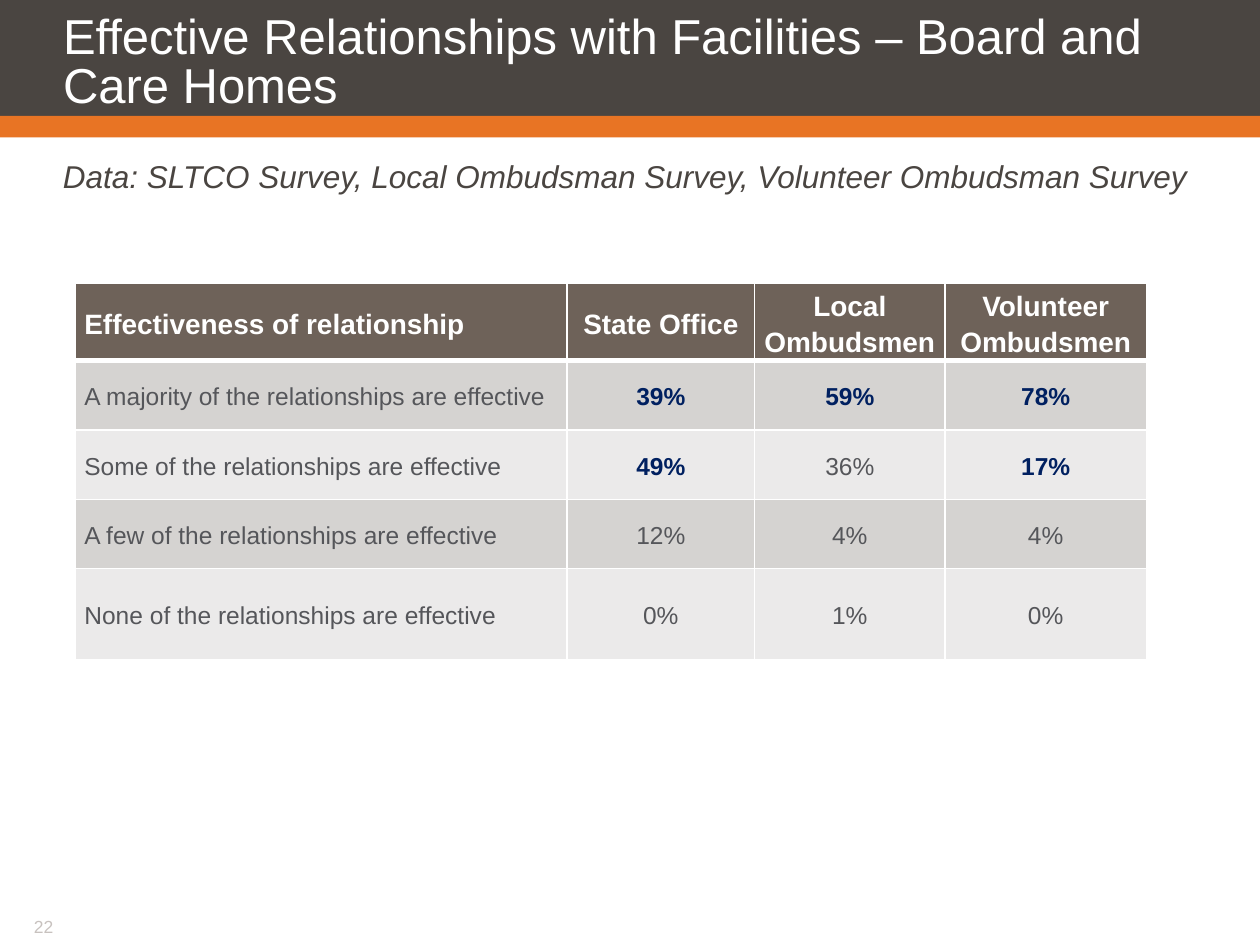
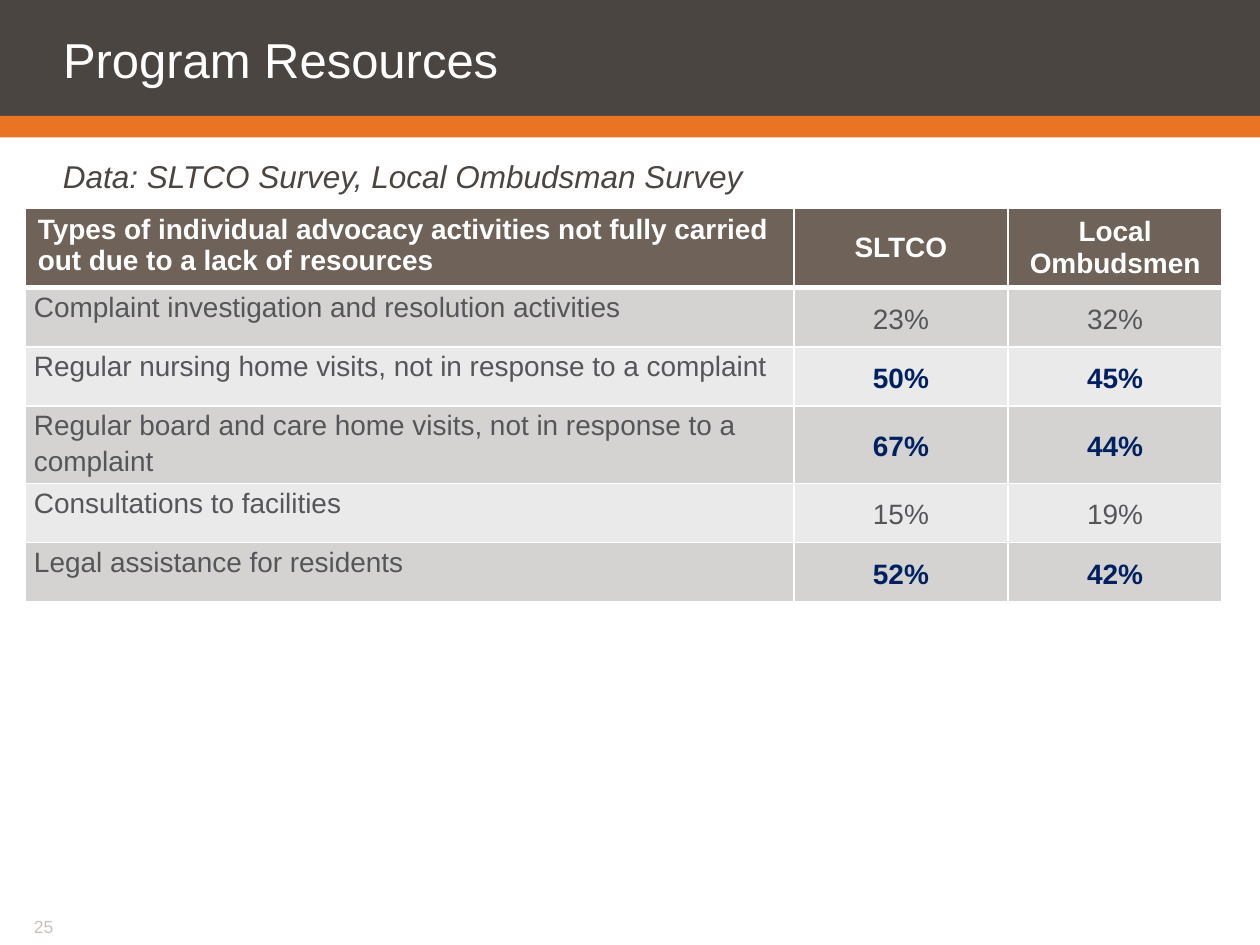
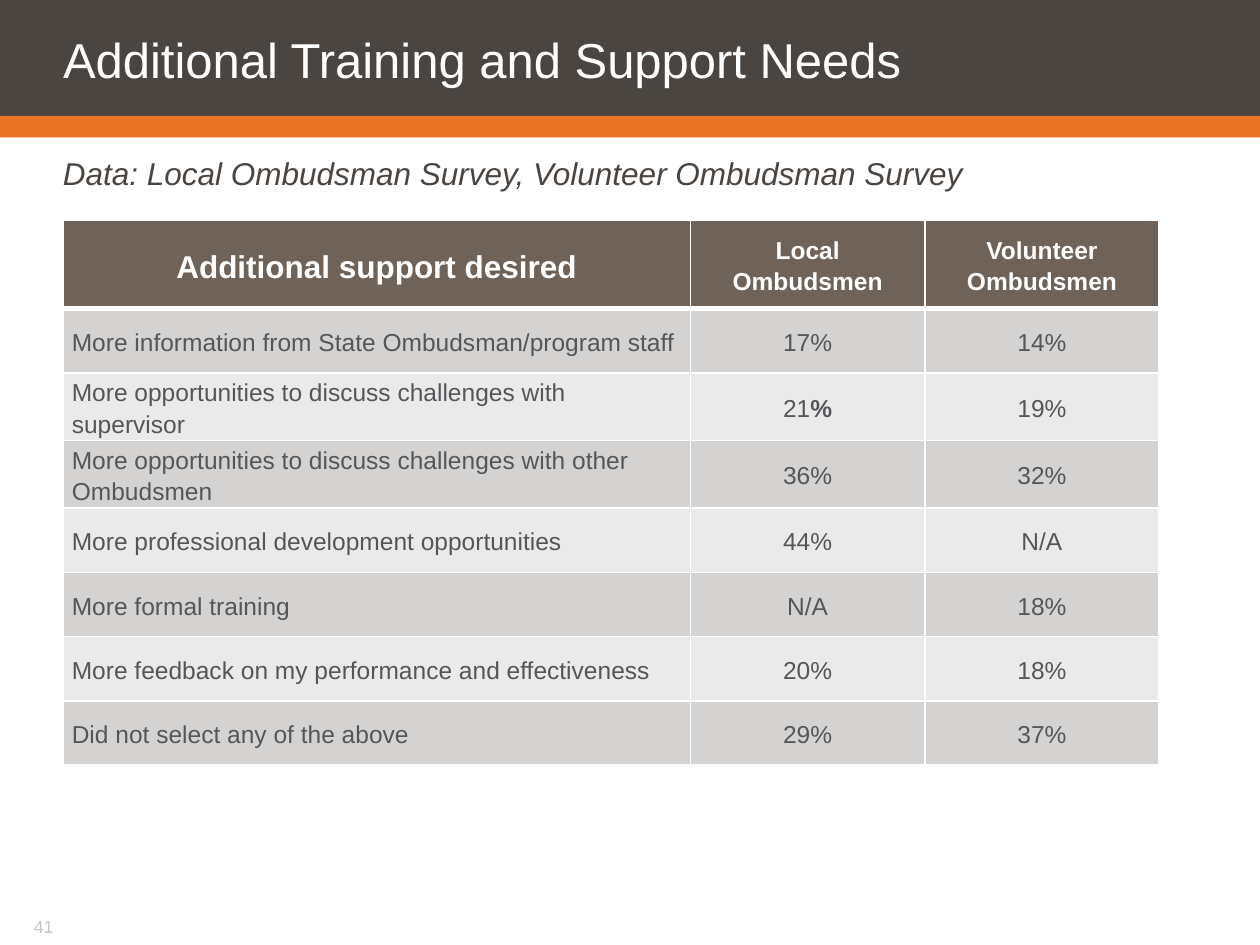
from pptx import Presentation
from pptx import util as u
from pptx.dml.color import RGBColor
from pptx.enum import shapes, text
from pptx.oxml import parse_xml
from pptx.oxml.ns import nsdecls

Inches, Pt = u.Inches, u.Pt
LEFT, CENTER = text.PP_ALIGN.LEFT, text.PP_ALIGN.CENTER
TOP, MIDDLE = text.MSO_ANCHOR.TOP, text.MSO_ANCHOR.MIDDLE
WHITE, DARK, ORANGE, GRAY = "FFFFFF", "4A4541", "E87424", "C8C2BF"
BROWN, INK, NAVY = "6E6259", "55565A", "002060"
STRIPES = ("D5D3D1", "EBEAEA")
TIGHT = (0.07, 0, 0.07, 0)
ROOMY = (0.1, 0.05, 0.1, 0.05)


def rgb(value):
    return RGBColor.from_string(value)


def write(tf, content, size=14, color=INK, bold=False, italic=False,
          align=LEFT, spacing=None):
    """Fill a text frame with a string or a list of (text, format) runs."""
    p = tf.paragraphs[0]
    p.alignment = align
    p.line_spacing = spacing
    runs = [(content, {})] if isinstance(content, str) else content
    for words, own in runs:
        r = p.add_run()
        r.text = words
        r.font.name = "Arial"
        r.font.size = Pt(size)
        r.font.bold = own.get("bold", bold)
        r.font.italic = italic
        r.font.color.rgb = rgb(own.get("color", color))


def key(value):
    """Highlight a leading percentage."""
    return [(value, {"bold": True, "color": NAVY})]


def set_margins(target, margins):
    (target.margin_left, target.margin_top,
     target.margin_right, target.margin_bottom) = map(Inches, margins)


def set_borders(cell, **widths):
    tcPr = cell._tc.get_or_add_tcPr()
    sides = [side for side in "LRTB" if side in widths]
    for i, side in enumerate(sides):
        tcPr.insert(i, parse_xml(
            f'<a:ln{side} {nsdecls("a")} w="{Pt(widths[side])}"><a:solidFill>'
            f'<a:srgbClr val="{WHITE}"/></a:solidFill></a:ln{side}>'))


class Deck:
    def __init__(self):
        self.prs = Presentation()
        self.prs.slide_width, self.prs.slide_height = Inches(10), Inches(7.5)
        self.s = None

    def slide(self, title, number, source, source_top=1.22):
        self.s = self.prs.slides.add_slide(self.prs.slide_layouts[5])
        self.band(0, 0.92, DARK)
        self.band(0.92, 0.17, ORANGE)
        self.title(title)
        self.text_box(source, (0, source_top, 10, 0.33), (0.5, 0.03, 0, 0),
                      size=18, color=DARK, italic=True)
        self.text_box(str(number), (0.17, 7.27, 1.92, 0.18), (0.1, 0, 0.1, 0.05),
                      size=10, color=GRAY)

    def band(self, top, height, color):
        sp = self.s.shapes.add_shape(shapes.MSO_SHAPE.RECTANGLE, 0, Inches(top),
                                     self.prs.slide_width, Inches(height))
        sp.shadow.inherit = False
        sp.fill.solid()
        sp.fill.fore_color.rgb = rgb(color)
        sp.line.fill.background()

    def title(self, words):
        sp = self.s.shapes.title
        self.s.shapes._spTree.append(sp._element)  # in front of the bands
        sp.left, sp.top, sp.width, sp.height = map(Inches, (0, 0, 10, 0.92))
        tf = sp.text_frame
        tf.auto_size = text.MSO_AUTO_SIZE.NONE
        tf.vertical_anchor = MIDDLE
        set_margins(tf, (0.5, 0.1, 0.1, 0))
        write(tf, words, size=28, color=WHITE, spacing=Pt(28))

    def text_box(self, words, box, margins, **fmt):
        tf = self.s.shapes.add_textbox(*map(Inches, box)).text_frame
        tf.word_wrap = True
        set_margins(tf, margins)
        write(tf, words, **fmt)

    def table(self, left, top, cols, heights, rows, size=14, label_anchor=MIDDLE,
              head_sizes=(16,), head_align=LEFT, head_margins=TIGHT,
              head_spacing=1.15):
        """heights holds the header height, the body height and the last one."""
        head_height, body_height, last_height = heights
        row_heights = [head_height] + [body_height] * (len(rows) - 2) + [last_height]
        table = self.s.shapes.add_table(
            len(rows), len(cols), Inches(left), Inches(top),
            Inches(sum(cols)), Inches(sum(row_heights))).table
        for column, width in zip(table.columns, cols):
            column.width = Inches(width)
        for i, (values, height) in enumerate(zip(rows, row_heights)):
            table.rows[i].height = Inches(height)
            for j, value in enumerate(values):
                cell = table.cell(i, j)
                head, label = i == 0, j == 0
                cell.fill.solid()
                cell.fill.fore_color.rgb = rgb(BROWN if head else STRIPES[(i - 1) % 2])
                cell.vertical_anchor = label_anchor if label else MIDDLE
                set_margins(cell, head_margins if head else TIGHT)
                if head:
                    set_borders(cell, L=1, R=1, T=1, B=3)
                    write(cell.text_frame, value, color=WHITE, bold=True,
                          size=head_sizes[min(j, len(head_sizes) - 1)],
                          align=head_align if label else CENTER,
                          spacing=head_spacing)
                else:
                    set_borders(cell, L=1, R=1, T=3 if i == 1 else 1, B=1)
                    write(cell.text_frame, value, size=size, spacing=1.15,
                          align=LEFT if label else CENTER)


def main():
    deck = Deck()

    # Relationships with board and care homes
    deck.slide("Effective Relationships with Facilities – Board and Care Homes", 22,
               "Data: SLTCO Survey, Local Ombudsman Survey, Volunteer Ombudsman Survey")
    deck.table(0.6, 2.25, (3.9, 1.49, 1.51, 1.6), (0.55, 0.55, 0.72), [
        ("Effectiveness of relationship", "State Office", "Local Ombudsmen",
         "Volunteer Ombudsmen"),
        ("A majority of the relationships are effective",
         key("39%"), key("59%"), key("78%")),
        ("Some of the relationships are effective", key("49%"), "36%", key("17%")),
        ("A few of the relationships are effective", "12%", "4%", "4%"),
        ("None of the relationships are effective", "0%", "1%", "0%"),
    ])

    # Activities limited by resources
    deck.slide("Program Resources", 25, "Data: SLTCO Survey, Local Ombudsman Survey")
    deck.table(0.2, 1.65, (6.1, 1.7, 1.7), (0.41, 0.47, 0.47), [
        ("Types of individual advocacy activities not fully carried out "
         "due to a lack of resources", "SLTCO", "Local Ombudsmen"),
        ("Complaint investigation and resolution activities", "23%", "32%"),
        ("Regular nursing home visits, not in response to a complaint",
         key("50%"), key("45%")),
        ("Regular board and care home visits, not in response to a complaint",
         key("67%"), key("44%")),
        ("Consultations to facilities", "15%", "19%"),
        ("Legal assistance for residents", key("52%"), key("42%")),
    ], size=16, label_anchor=TOP, head_margins=ROOMY, head_spacing=None)

    # Training and support wishes
    deck.slide("Additional Training and Support Needs", 41,
               "Data: Local Ombudsman Survey, Volunteer Ombudsman Survey",
               source_top=1.19)
    deck.table(0.5, 1.75, (4.98, 1.86, 1.86), (0.7, 0.51, 0.51), [
        ("Additional support desired", "Local Ombudsmen", "Volunteer Ombudsmen"),
        ("More information from State Ombudsman/program staff", "17%", "14%"),
        ("More opportunities to discuss challenges with supervisor",
         [("21", {}), ("%", {"bold": True})], "19%"),
        ("More opportunities to discuss challenges with other Ombudsmen",
         "36%", "32%"),
        ("More professional development opportunities", "44%", "N/A"),
        ("More formal training", "N/A", "18%"),
        ("More feedback on my performance and effectiveness", "20%", "18%"),
        ("Did not select any of the above", "29%", "37%"),
    ], head_sizes=(18, 14), head_align=CENTER)

    deck.prs.save("out.pptx")


if __name__ == "__main__":
    main()
